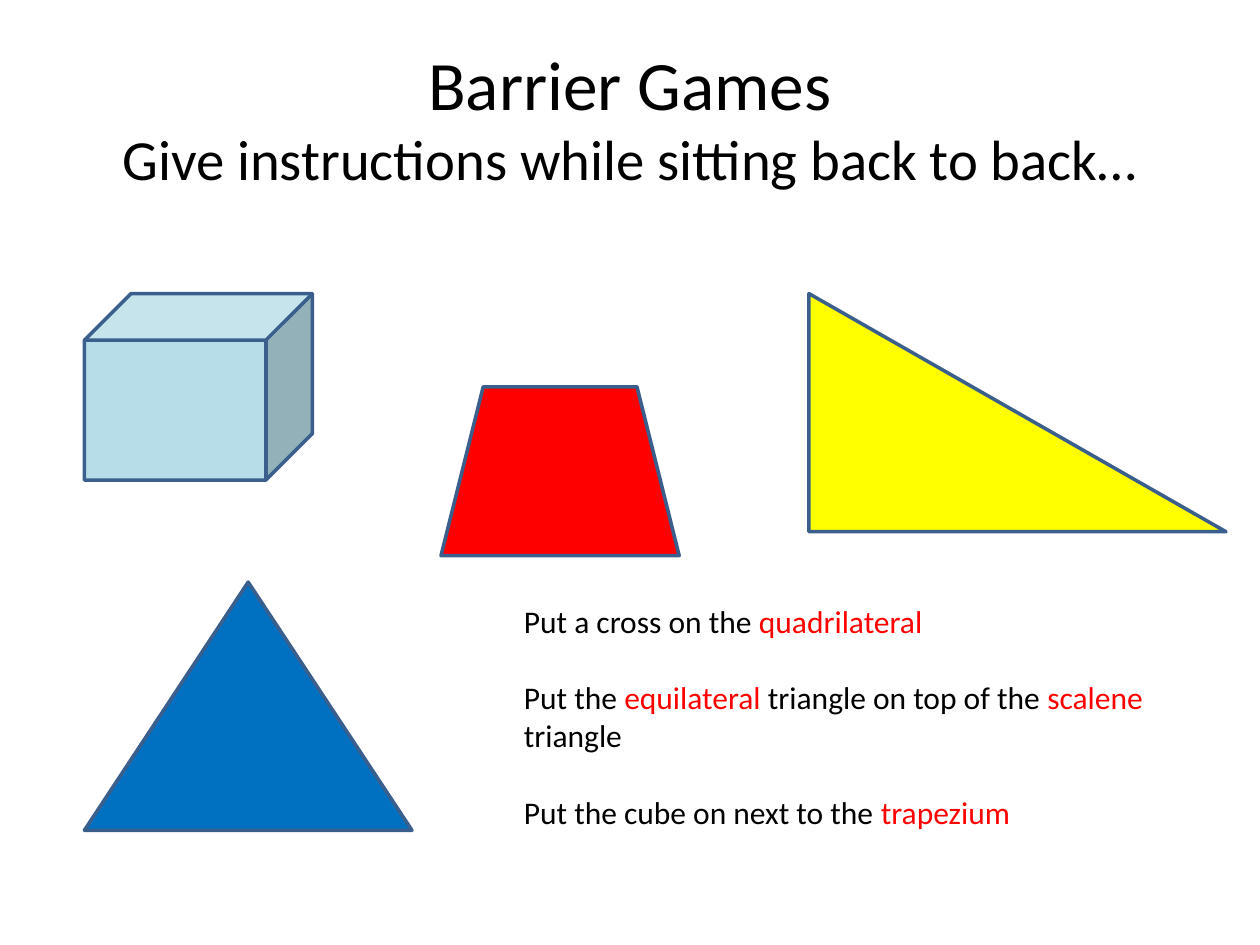
from pptx import Presentation
from pptx.dml.color import RGBColor
from pptx.enum.shapes import MSO_SHAPE
from pptx.enum.text import MSO_ANCHOR, PP_ALIGN
from pptx.util import Inches, Pt

CUBE = MSO_SHAPE.CUBE
TRAPEZIUM = MSO_SHAPE.TRAPEZOID
RIGHT_TRIANGLE = MSO_SHAPE.RIGHT_TRIANGLE
TRIANGLE = MSO_SHAPE.ISOSCELES_TRIANGLE
MIDDLE = MSO_ANCHOR.MIDDLE
CENTER = PP_ALIGN.CENTER

FONT = "Calibri"
BLACK, RED, OUTLINE = "000000", "FF0000", "3A5F8C"
LEFT_EDGE, TOP_ROW = 0.67, 2.33

FIGURES = [
    (TRIANGLE, LEFT_EDGE, 4.62, 2.6, 1.97, "0070C0"),
    (RIGHT_TRIANGLE, 6.42, TOP_ROW, 3.31, 1.89, "FFFF00"),
    (TRAPEZIUM, 3.5, 3.07, 1.89, 1.34, RED),
    (CUBE, LEFT_EDGE, TOP_ROW, 1.81, 1.48, "B7DEE8"),
]
TITLE_LINES = [("Barrier Games", 39.6),
               ("Give instructions while sitting back to back…", 32.4)]
INSTRUCTIONS = [
    [("Put a cross on the ", BLACK), ("quadrilateral", RED)],
    [("Put the ", BLACK), ("equilateral", RED),
     (" triangle on top of the ", BLACK), ("scalene ", RED),
     ("triangle", BLACK)],
    [("Put the cube on next to the ", BLACK), ("trapezium", RED)],
]


def rgb(hex_code):
    """Turn a hex string into a colour."""
    return RGBColor.from_string(hex_code)


def add_figure(slide, geometry, left, top, width, height, fill):
    """Draw one outlined geometric figure."""
    figure = slide.shapes.add_shape(
        geometry, Inches(left), Inches(top), Inches(width), Inches(height))
    figure.shadow.inherit = False
    figure.fill.solid()
    figure.fill.fore_color.rgb = rgb(fill)
    figure.line.color.rgb = rgb(OUTLINE)
    figure.line.width = Pt(2)


def add_text_frame(slide, left, top, width, height):
    """Add a wrapping text box and return its frame."""
    box = slide.shapes.add_textbox(
        Inches(left), Inches(top), Inches(width), Inches(height))
    box.text_frame.word_wrap = True
    return box.text_frame


def add_title(slide):
    """Write the centred two-line heading."""
    frame = add_text_frame(slide, 0.5, 0.3, 9, 1.25)
    frame.vertical_anchor = MIDDLE
    heading = frame.paragraphs[0]
    heading.alignment = CENTER
    heading.font.name = FONT
    heading.font.color.rgb = rgb(BLACK)
    for index, (wording, size) in enumerate(TITLE_LINES):
        if index:
            heading.add_line_break()
        line = heading.add_run()
        line.text = wording
        line.font.size = Pt(size)


def add_instructions(slide):
    """Write the instructions with their key terms coloured."""
    frame = add_text_frame(slide, 4.06, 4.73, 5.43, 1.92)
    for index, pieces in enumerate(INSTRUCTIONS):
        instruction = frame.add_paragraph() if index else frame.paragraphs[0]
        instruction.font.name = FONT
        instruction.font.size = Pt(18)
        instruction.space_before = Pt(22 if index else 0)
        for wording, color in pieces:
            piece = instruction.add_run()
            piece.text = wording
            piece.font.color.rgb = rgb(color)


def main():
    """Build and save the slide."""
    deck = Presentation()
    deck.slide_width, deck.slide_height = Inches(10), Inches(7.5)
    slide = deck.slides.add_slide(deck.slide_layouts[6])
    add_title(slide)
    for figure in FIGURES:
        add_figure(slide, *figure)
    add_instructions(slide)
    deck.save("out.pptx")


if __name__ == "__main__":
    main()
